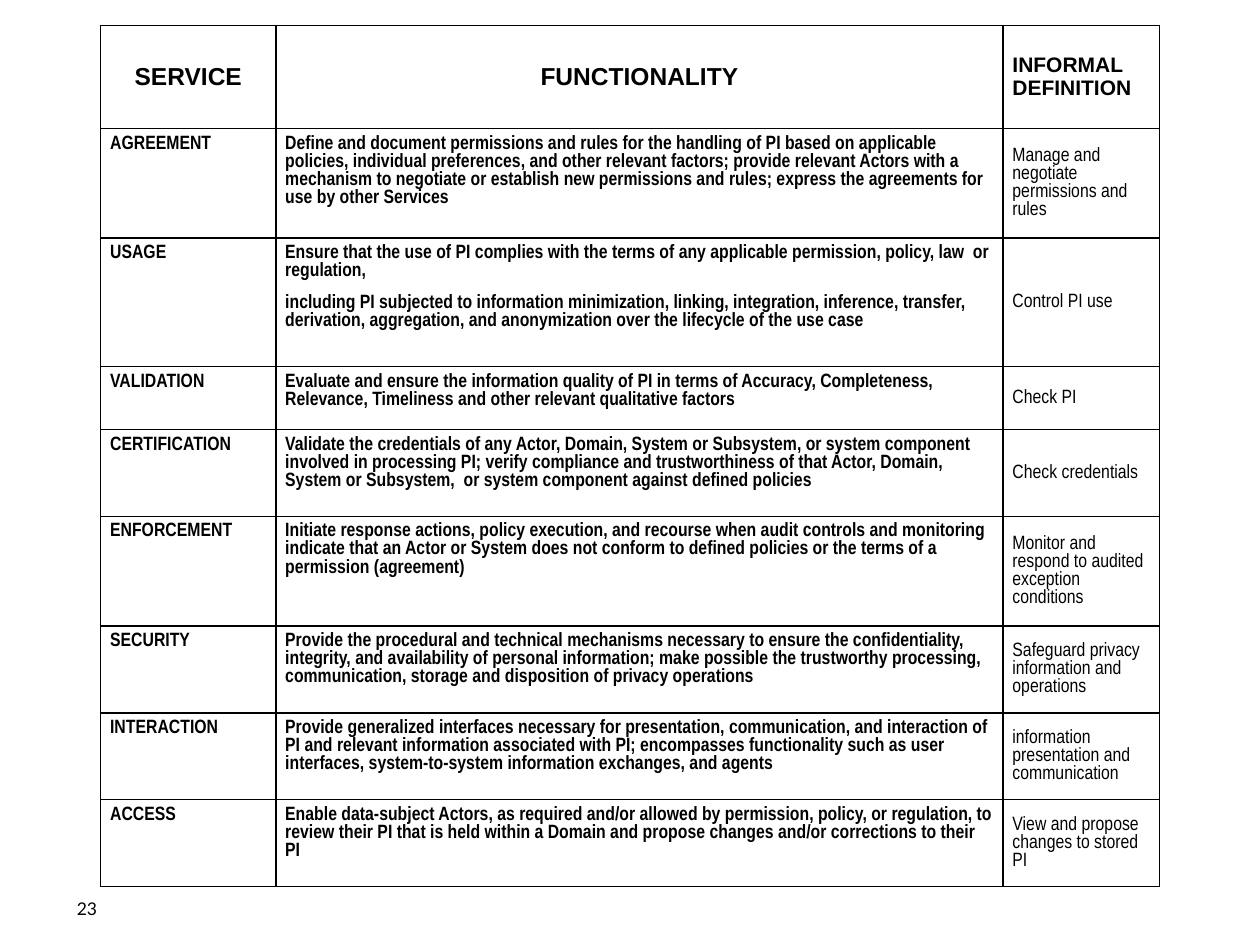
import dataclasses

import lxml.etree
import pptx
import pptx.dml.color
import pptx.enum.text
import pptx.oxml.ns
import pptx.util

Cm = pptx.util.Cm
Pt = pptx.util.Pt
ALIGN = pptx.enum.text.PP_ALIGN
ANCHOR = pptx.enum.text.MSO_ANCHOR


@dataclasses.dataclass(frozen=True)
class Theme:
    """Colours, fonts, type sizes and table measures of the slide."""
    ink: str = "000000"
    header_font: str = "Arial"
    body_font: str = "Arial Narrow"
    number_font: str = "Lato"
    header_size: float = 14
    small_header_size: float = 12
    body_size: float = 11
    number_size: float = 10
    paragraph_gap: float = 4
    border_width: float = 1
    inset_x: float = 0.19
    inset_y: float = 0.13


THEME = Theme()
COLUMN_WIDTHS = (3.53, 14.66, 3.15)
HEADER_HEIGHT = 2.08
HEADERS = (
    ("SERVICE", THEME.header_size, ALIGN.CENTER),
    ("FUNCTIONALITY", THEME.header_size, ALIGN.CENTER),
    ("INFORMAL DEFINITION", THEME.small_header_size, ALIGN.LEFT),
)
SERVICES = (
    (2.21, "AGREEMENT",
     "Define and document permissions and rules for the handling of PI based on applicable "
     "policies, individual preferences, and other relevant factors; provide relevant Actors "
     "with a mechanism to negotiate or establish new permissions and rules; express the "
     "agreements for use by other Services",
     "Manage and negotiate permissions and rules"),
    (2.59, "USAGE",
     "Ensure that the use of PI complies with the terms of any applicable permission, policy, "
     "law  or regulation,\n"
     "including PI subjected to information minimization, linking, integration, inference, "
     "transfer, derivation, aggregation, and anonymization over the lifecycle of the use case",
     "Control PI use"),
    (1.27, "VALIDATION",
     "Evaluate and ensure the information quality of PI in terms of Accuracy, Completeness, "
     "Relevance, Timeliness and other relevant qualitative factors",
     "Check PI"),
    (1.75, "CERTIFICATION",
     "Validate the credentials of any Actor, Domain, System or Subsystem, or system component "
     "involved in processing PI; verify compliance and trustworthiness of that Actor, Domain, "
     "System or Subsystem,  or system component against defined policies",
     "Check credentials"),
    (2.21, "ENFORCEMENT",
     "Initiate response actions, policy execution, and recourse when audit controls and "
     "monitoring indicate that an Actor or System does not conform to defined policies or the "
     "terms of a permission (agreement)",
     "Monitor and respond to audited exception conditions"),
    (1.75, "SECURITY",
     "Provide the procedural and technical mechanisms necessary to ensure the "
     "confidentiality, integrity, and availability of personal information; make possible the "
     "trustworthy processing, communication, storage and disposition of privacy operations",
     "Safeguard privacy information and operations"),
    (1.75, "INTERACTION",
     "Provide generalized interfaces necessary for presentation, communication, and "
     "interaction of PI and relevant information associated with PI; encompasses "
     "functionality such as user interfaces, system-to-system information exchanges, and agents",
     "information presentation and communication"),
    (1.75, "ACCESS",
     "Enable data-subject Actors, as required and/or allowed by permission, policy, or "
     "regulation, to review their PI that is held within a Domain and propose changes and/or "
     "corrections to their PI",
     "View and propose changes to stored PI"),
)


def write_text(text_frame, text, *, font=THEME.body_font, size=THEME.body_size,
               bold=False, align=ALIGN.LEFT):
    """Write one paragraph for each line of text in the given format."""
    text_frame.word_wrap = True
    for index, line in enumerate(text.split("\n")):
        paragraph = text_frame.add_paragraph() if index else text_frame.paragraphs[0]
        paragraph.alignment = align
        if index:
            paragraph.space_before = Pt(2 * THEME.paragraph_gap)
        run = paragraph.add_run()
        run.text = line
        run.font.name = font
        run.font.size = Pt(size)
        run.font.bold = bold
        run.font.color.rgb = pptx.dml.color.RGBColor.from_string(THEME.ink)


def format_cell(cell, anchor):
    """Give a cell its borders, clear fill, insets and anchor."""
    qn = pptx.oxml.ns.qn
    properties = cell._tc.get_or_add_tcPr()
    for side in ("a:lnL", "a:lnR", "a:lnT", "a:lnB"):
        line = lxml.etree.SubElement(properties, qn(side), w=str(Pt(THEME.border_width)))
        fill = lxml.etree.SubElement(line, qn("a:solidFill"))
        lxml.etree.SubElement(fill, qn("a:srgbClr"), val=THEME.ink)
    cell.fill.background()
    cell.margin_left = cell.margin_right = Cm(THEME.inset_x)
    cell.margin_top = cell.margin_bottom = Cm(THEME.inset_y)
    cell.vertical_anchor = anchor


def add_service_table(slide, left, top):
    """Add the table of services with its top left corner at the given point."""
    heights = [HEADER_HEIGHT] + [service[0] for service in SERVICES]
    table = slide.shapes.add_table(
        len(heights), len(COLUMN_WIDTHS), Cm(left), Cm(top),
        Cm(sum(COLUMN_WIDTHS)), Cm(sum(heights))).table
    table.horz_banding = False
    for column, width in zip(table.columns, COLUMN_WIDTHS):
        column.width = Cm(width)
    for row, height in zip(table.rows, heights):
        row.height = Cm(height)

    for cell, (text, size, align) in zip(table.rows[0].cells, HEADERS):
        format_cell(cell, ANCHOR.MIDDLE)
        write_text(cell.text_frame, text, font=THEME.header_font, size=size,
                   bold=True, align=align)
    for row_index, (_, *texts) in enumerate(SERVICES, start=1):
        for column_index, text in enumerate(texts):
            cell = table.cell(row_index, column_index)
            is_definition = column_index == 2
            format_cell(cell, ANCHOR.MIDDLE if is_definition else ANCHOR.TOP)
            write_text(cell.text_frame, text, bold=not is_definition)


def add_page_number(slide, left, top, width, height, number):
    """Add the page number in the given box."""
    box = slide.shapes.add_textbox(Cm(left), Cm(top), Cm(width), Cm(height))
    write_text(box.text_frame, number, font=THEME.number_font, size=THEME.number_size)


def main():
    """Build the slide and save the presentation."""
    presentation = pptx.Presentation()
    presentation.slide_width = Cm(25.4)
    presentation.slide_height = Cm(19.05)
    slide = presentation.slides.add_slide(presentation.slide_layouts[6])
    add_page_number(slide, 1.3, 17.98, 1.07, 1.02, "23")
    add_service_table(slide, 2.03, 0.51)
    presentation.save("out.pptx")


if __name__ == "__main__":
    main()
